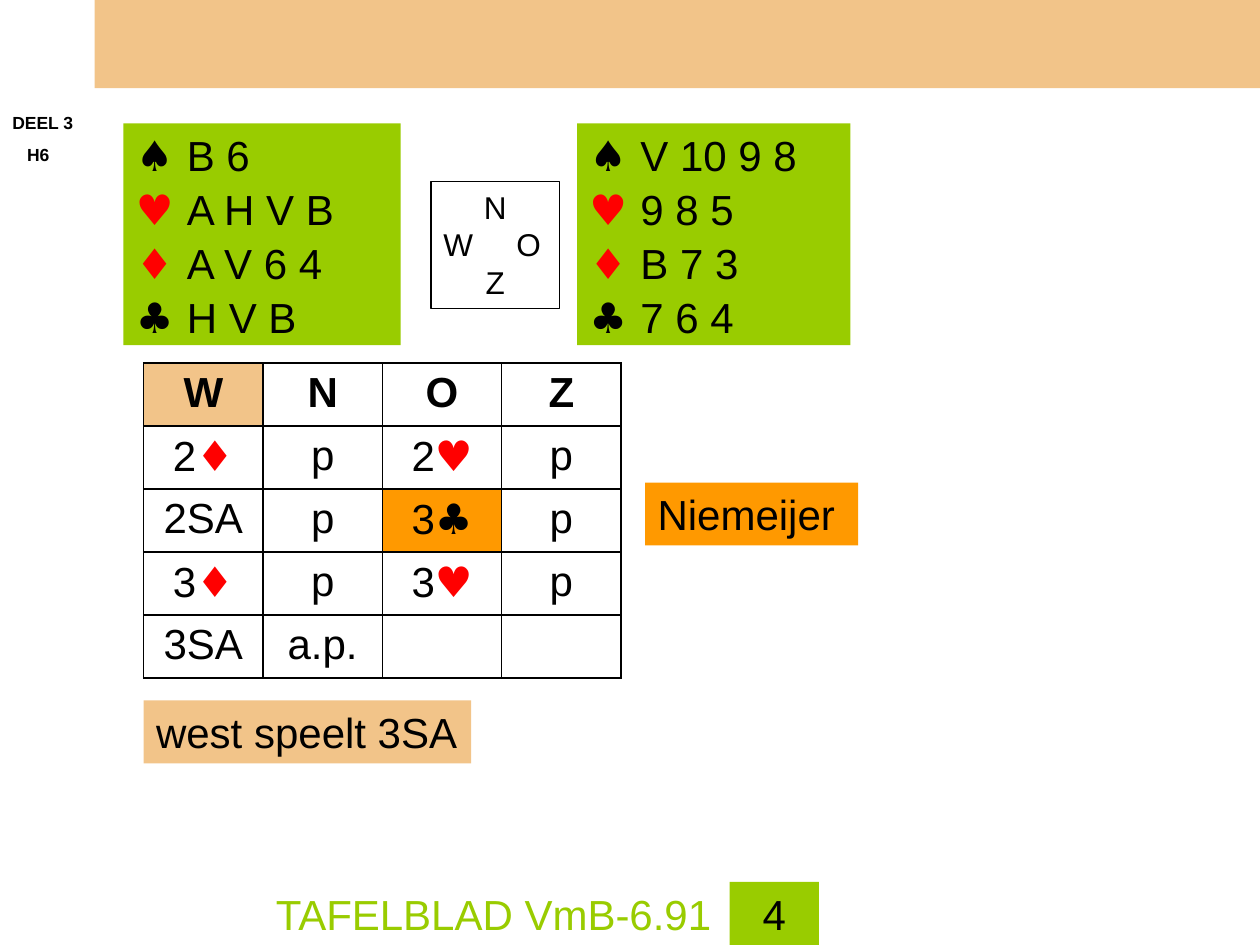
from lxml import etree
from pptx import Presentation
from pptx.dml.color import RGBColor
from pptx.enum.shapes import MSO_SHAPE
from pptx.enum.text import MSO_ANCHOR, PP_ALIGN
from pptx.oxml.ns import qn
from pptx.util import Inches, Pt

RECTANGLE = MSO_SHAPE.RECTANGLE
TOP = MSO_ANCHOR.TOP
LEFT = PP_ALIGN.LEFT
CENTER = PP_ALIGN.CENTER

COLUMNS, ROWS = 100, 75
COLORS = {
    "sand": "F2C489",
    "green": "99CC00",
    "orange": "FF9900",
    "black": "000000",
    "red": "FF0000",
}
SUITS = {"♠": "black", "♥": "red", "♦": "red", "♣": "black"}


def rgb(name):
    return RGBColor.from_string(COLORS[name])


class SlideBuilder:
    text_font = "Arial"
    suit_font = "DejaVu Sans"

    def __init__(self, presentation):
        self.column = presentation.slide_width / COLUMNS
        self.row = presentation.slide_height / ROWS
        self.slide = presentation.slides.add_slide(presentation.slide_layouts[6])

    def area(self, left, top, width, height):
        return (
            round(left * self.column),
            round(top * self.row),
            round(width * self.column),
            round(height * self.row),
        )

    def paragraph(self, paragraph, runs, size=24, color="black", bold=False,
                  align=LEFT, before=0, indent=0, tab=None):
        formats = {"alignment": align, "space_before": Pt(before)}
        for name, value in formats.items():
            setattr(paragraph, name, value)
        properties = paragraph._p.get_or_add_pPr()
        if indent:
            properties.set("marL", str(round(indent * self.column)))
        if tab:
            tabs = etree.SubElement(properties, qn("a:tabLst"))
            etree.SubElement(tabs, qn("a:tab"), pos=str(round(tab * self.column)), algn="l")
        for text in runs:
            suit = SUITS.get(text.strip())
            run = paragraph.add_run()
            run.text = text
            formats = {
                "name": self.suit_font if suit else self.text_font,
                "size": Pt(size),
                "bold": bold,
            }
            for name, value in formats.items():
                setattr(run.font, name, value)
            run.font.color.rgb = rgb(suit or color)

    def fill_frame(self, frame, lines, before=0, **style):
        frame.word_wrap = True
        frame.vertical_anchor = TOP
        for index, line in enumerate(lines):
            paragraph = frame.paragraphs[0] if index == 0 else frame.add_paragraph()
            runs, own = line if isinstance(line[-1], dict) else (line, {})
            space = before if index else 0
            self.paragraph(paragraph, runs, **{"before": space, **style, **own})

    def text(self, area, lines, **style):
        box = self.slide.shapes.add_textbox(*self.area(*area))
        self.fill_frame(box.text_frame, lines, **style)

    def box(self, area, lines=(), fill=None, line=None, **style):
        shape = self.slide.shapes.add_shape(RECTANGLE, *self.area(*area))
        shape.shadow.inherit = False
        if fill:
            shape.fill.solid()
            shape.fill.fore_color.rgb = rgb(fill)
        else:
            shape.fill.background()
        if line:
            shape.line.color.rgb = rgb(line)
            shape.line.width = Pt(0.75)
        else:
            shape.line.fill.background()
        self.fill_frame(shape.text_frame, lines, **style)

    def borders(self, cell):
        properties = cell._tc.get_or_add_tcPr()
        for index, side in enumerate(("lnL", "lnR", "lnT", "lnB")):
            border = etree.Element(qn(f"a:{side}"), w=str(Pt(1)))
            fill = etree.SubElement(border, qn("a:solidFill"))
            etree.SubElement(fill, qn("a:srgbClr"), val=COLORS["black"])
            properties.insert(index, border)

    def table(self, area, rows, fills):
        left, top, width, height = self.area(*area)
        table = self.slide.shapes.add_table(
            len(rows), len(rows[0]), left, top, width, height
        ).table
        for name in ("first_row", "horz_banding"):
            setattr(table, name, False)
        for row_index, row in enumerate(rows):
            for column_index, runs in enumerate(row):
                cell = table.cell(row_index, column_index)
                fill = fills.get((row_index, column_index))
                if fill:
                    cell.fill.solid()
                    cell.fill.fore_color.rgb = rgb(fill)
                else:
                    cell.fill.background()
                self.borders(cell)
                self.paragraph(cell.text_frame.paragraphs[0], runs,
                               bold=row_index == 0, align=CENTER)


def main():
    presentation = Presentation()
    presentation.slide_width = Inches(10)
    presentation.slide_height = Inches(7.5)
    builder = SlideBuilder(presentation)

    builder.box((7.5, 0, 92.5, 7), fill="sand")
    builder.text((0, 8.4, 7.5, 5.2), [["DEEL 3"], (["H6"], {"indent": 1.16})],
                 size=10, bold=True, before=6.2)

    hands = [
        ((9.8, 9.8, 22, 17.6), ("B 6", "A H V B", "A V 6 4", "H V B")),
        ((45.8, 9.8, 21.7, 17.6), ("V 10 9 8", "9 8 5", "B 7 3", "7 6 4")),
    ]
    for area, cards in hands:
        lines = [[f"{suit} ", held] for suit, held in zip(SUITS, cards)]
        builder.box(area, lines, fill="green", before=2)

    bidding = [
        [["W"], ["N"], ["O"], ["Z"]],
        [["2", "♦"], ["p"], ["2", "♥"], ["p"]],
        [["2SA"], ["p"], ["3", "♣"], ["p"]],
        [["3", "♦"], ["p"], ["3", "♥"], ["p"]],
        [["3SA"], ["a.p."], [], []],
    ]
    builder.table((11.4, 28.8, 37.9, 25), bidding, {(0, 0): "sand", (2, 2): "orange"})

    builder.box((11.4, 55.6, 26, 5), [["west speelt 3SA"]], fill="sand")
    builder.text((20.9, 70, 70.9, 5), [["TAFELBLAD VmB-6.91"]], color="green")
    builder.box((57.9, 70, 7.1, 5), [["4"]], fill="green", align=CENTER)
    builder.box((51.2, 38.3, 16.9, 5), [["Niemeijer"]], fill="orange")

    compass = [["N"], (["W\tO"], {"align": LEFT, "tab": 5.8}), ["Z"]]
    builder.box((34.2, 14.4, 10.2, 10.1), compass, line="black", size=18, align=CENTER)

    presentation.save("out.pptx")


if __name__ == "__main__":
    main()
